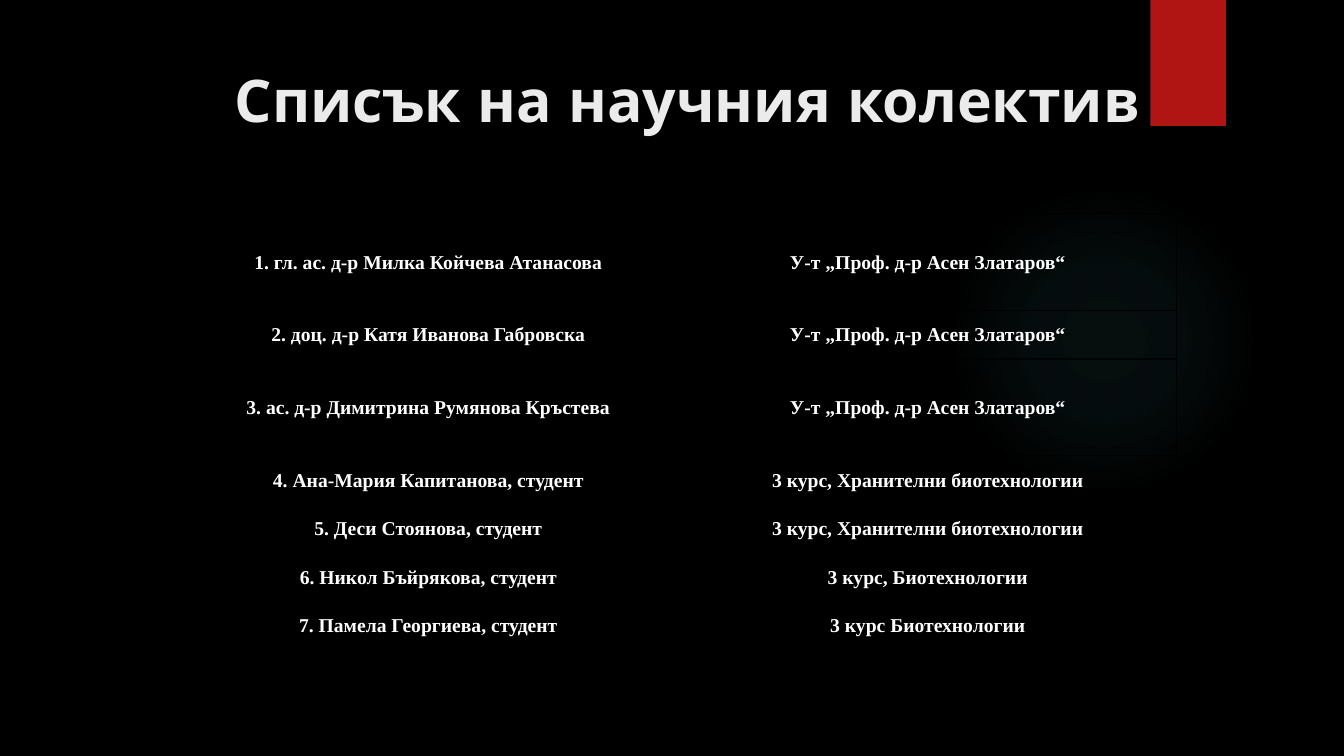
"""Build the slide that lists the research team and their affiliations."""
from dataclasses import dataclass

import pptx
import pptx.dml.color
import pptx.enum.shapes
import pptx.enum.text
import pptx.oxml
import pptx.oxml.ns
import pptx.util

Pt = pptx.util.Pt
RGBColor = pptx.dml.color.RGBColor
MSO_SHAPE = pptx.enum.shapes.MSO_SHAPE
PP_ALIGN = pptx.enum.text.PP_ALIGN
MSO_ANCHOR = pptx.enum.text.MSO_ANCHOR

BLACK = RGBColor(0x00, 0x00, 0x00)
WHITE = RGBColor(0xFF, 0xFF, 0xFF)
LIGHT = RGBColor(0xEB, 0xEB, 0xEB)
RED = RGBColor(0xB0, 0x15, 0x13)
TEAL = RGBColor(0x50, 0xB9, 0xC1)
GLOW_STOPS = ((0, 7), (36, 6), (69, 0))
ROW_UNIT = 34.6
COLUMN_WIDTHS = (332.6, 367.9)
UNIVERSITY = "У-т „Проф. д-р Асен Златаров“"
FOOD_BIOTECH = "3 курс, Хранителни биотехнологии"


@dataclass
class Member:
    name: str
    affiliation: str
    units: int = 1


MEMBERS = (
    Member("1. гл. ас. д-р Милка Койчева Атанасова", UNIVERSITY, 2),
    Member("2. доц. д-р Катя Иванова Габровска", UNIVERSITY),
    Member("3. ас. д-р Димитрина Румянова Кръстева", UNIVERSITY, 2),
    Member("4. Ана-Мария Капитанова, студент", FOOD_BIOTECH),
    Member("5. Деси Стоянова, студент", FOOD_BIOTECH),
    Member("6. Никол Бъйрякова, студент", "3 курс, Биотехнологии"),
    Member("7. Памела Георгиева, студент", "3 курс Биотехнологии"),
)


def xml(tag: str, body: str):
    """Parse one DrawingML element."""
    ns = pptx.oxml.ns.nsdecls("a")
    name = tag.split()[0]
    return pptx.oxml.parse_xml(f"<a:{tag} {ns}>{body}</a:{name}>")


def add_text(tf, text: str, *, font: str, size: float, color: RGBColor,
             align=PP_ALIGN.LEFT, spacing: float = 1, after: float = 0,
             indent: float = 0) -> None:
    """Write one bold formatted paragraph into a text frame."""
    p = tf.paragraphs[0]
    p.alignment, p.line_spacing, p.space_after = align, spacing, Pt(after)
    if indent:
        p._p.get_or_add_pPr().set("indent", str(Pt(indent)))
    r = p.add_run()
    r.text = text
    r.font.name, r.font.size, r.font.bold = font, Pt(size), True
    r.font.color.rgb = color


def add_shape(s, kind, left: float, top: float, width: float, height: float):
    """Add a preset shape without outline or shadow."""
    sp = s.shapes.add_shape(kind, Pt(left), Pt(top), Pt(width), Pt(height))
    sp.shadow.inherit = False
    sp.line.fill.background()
    return sp


def add_glow(s) -> None:
    """Add the faint radial glow."""
    sp = add_shape(s, MSO_SHAPE.OVAL, 677.5, 131.8, 221.8, 221.8)
    sp.fill.background()
    stops = "".join(
        f'<a:gs pos="{pos * 1000}"><a:srgbClr val="{TEAL}">'
        f'<a:alpha val="{alpha * 1000}"/></a:srgbClr></a:gs>'
        for pos, alpha in GLOW_STOPS)
    grad = xml("gradFill", f'<a:gsLst>{stops}</a:gsLst><a:path path="circle">'
               '<a:fillToRect l="50000" t="50000" r="50000" b="50000"/></a:path>')
    spPr = sp.element.spPr
    spPr.replace(spPr.find(pptx.oxml.ns.qn("a:noFill")), grad)


def fill_cell(cell, text: str, indent: float) -> None:
    """Format one table cell and write its text."""
    cell.vertical_anchor = MSO_ANCHOR.MIDDLE
    cell.margin_left = cell.margin_right = Pt(5)
    cell.margin_top = cell.margin_bottom = Pt(0)
    tcPr = cell._tc.get_or_add_tcPr()
    for side in "LRTB":
        tcPr.append(xml(f'ln{side} w="{Pt(1)}"',
                        f'<a:solidFill><a:srgbClr val="{BLACK}"/></a:solidFill>'))
    cell.fill.background()
    add_text(cell.text_frame, text, font="Times New Roman", size=14, color=WHITE,
             align=PP_ALIGN.CENTER, spacing=1.06, after=8, indent=indent)


def add_members(s) -> None:
    """Add the table of team members."""
    height = ROW_UNIT * sum(m.units for m in MEMBERS)
    table = s.shapes.add_table(len(MEMBERS), 2, Pt(139.7), Pt(152.6),
                               Pt(sum(COLUMN_WIDTHS)), Pt(height)).table
    table.first_row = table.horz_banding = False
    for column, width in zip(table.columns, COLUMN_WIDTHS):
        column.width = Pt(width)
    for i, m in enumerate(MEMBERS):
        table.rows[i].height = Pt(ROW_UNIT * m.units)
        fill_cell(table.cell(i, 0), m.name, 0)
        fill_cell(table.cell(i, 1), m.affiliation, 13)


def main() -> None:
    """Build and save the slide."""
    prs = pptx.Presentation()
    prs.slide_width, prs.slide_height = Pt(960), Pt(540)
    s = prs.slides.add_slide(prs.slide_layouts[6])
    s.background.fill.solid()
    s.background.fill.fore_color.rgb = BLACK
    add_glow(s)
    ribbon = add_shape(s, MSO_SHAPE.RECTANGLE, 821.7, 0, 54, 90)
    ribbon.fill.solid()
    ribbon.fill.fore_color.rgb = RED
    title = s.shapes.add_textbox(Pt(160.6), Pt(41.8), Pt(740.9), Pt(110.2))
    title.text_frame.word_wrap = True
    add_text(title.text_frame, "Списък на научния колектив",
             font="Quicksand", size=42, color=LIGHT)
    add_members(s)
    prs.save("out.pptx")


if __name__ == "__main__":
    main()
